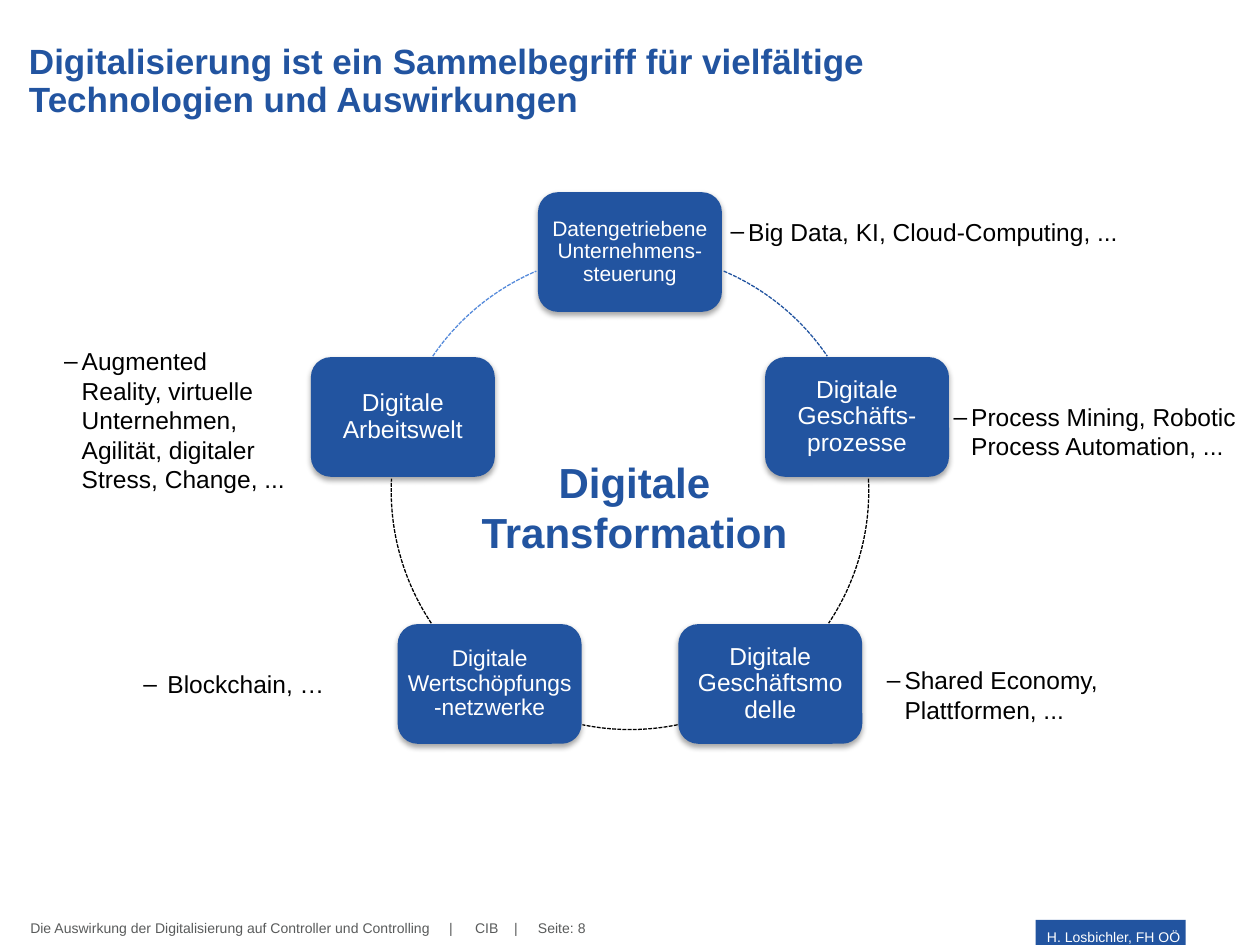
from dataclasses import dataclass
from math import cos, radians, sin

from lxml import etree
from pptx import Presentation, util as u
from pptx.dml.color import RGBColor as Rgb
from pptx.enum import dml, shapes, text
from pptx.oxml import ns


@dataclass(frozen=True)
class Theme:
    font: str = "Arial"
    blue: str = "2254A0"
    light: str = "568BDB"
    grey: str = "595B5B"
    black: str = "000000"
    white: str = "FFFFFF"
    head: int = 20
    core: int = 24
    note: int = 14
    foot: int = 8


@dataclass(frozen=True)
class Box:
    col: float
    row: float
    wide: float
    high: float


@dataclass(frozen=True)
class Node:
    label: str
    size: int
    pad: float


@dataclass(frozen=True)
class Arc:
    start: float
    end: float
    color: str


@dataclass(frozen=True)
class Note:
    label: str
    box: Box
    left: float = 0.64
    hang: float = 0.14


T = Theme()
COLS, ROWS = 100, 75
MID = (50, 38.95)
RADIUS = 18.95
WIDE, HIGH = 14.6, 9.5
AL, AN = text.PP_ALIGN, text.MSO_ANCHOR

NODES = [
    Node("Datengetriebene Unternehmens-steuerung", 12, 0.02),
    Node("Digitale Geschäfts-prozesse", 14, 0.06),
    Node("Digitale Geschäftsmodelle", 14, 0.06),
    Node("Digitale Wertschöpfungs-netzwerke", 13, 0.02),
    Node("Digitale Arbeitswelt", 14, 0.06),
]
ARCS = [
    Arc(293.1, 325.7, T.blue),
    Arc(357.1, 33.7, T.black),
    Arc(78.5, 101.5, T.black),
    Arc(146.3, 182.9, T.black),
    Arc(214.3, 246.9, T.light),
]
NOTES = [
    Note("Big Data, KI, Cloud-Computing, ...", Box(52, 16.7, 58.6, 4)),
    Note("Process Mining, Robotic Process Automation, ...",
         Box(69.7, 31.4, 30.3, 17.5)),
    Note("Augmented Reality, virtuelle Unternehmen, Agilität, digitaler "
         "Stress, Change, ...", Box(-0.9, 27, 24.8, 17.5)),
    Note("Shared Economy,\vPlattformen, ...", Box(64.4, 52.3, 25.8, 8)),
    Note("Blockchain, …", Box(5.4, 52.6, 24.8, 4.3), 0.69, 0.19),
]
FOOT = [
    ("Die Auswirkung der Digitalisierung auf Controller und Controlling     |",
     Box(2.4, 73, 70.8, 1.3)),
    ("CIB    |", Box(37.7, 73, 18.2, 1.3)),
    ("Seite: 8", Box(42.7, 73, 6.3, 2.2)),
]

deck = Presentation()
deck.slide_width, deck.slide_height = u.Inches(10), u.Inches(7.5)
slide = deck.slides.add_slide(deck.slide_layouts[5])


def scale(box: Box) -> tuple:
    x, y = deck.slide_width / COLS, deck.slide_height / ROWS
    return tuple(u.Emu(round(n)) for n in
                 (box.col * x, box.row * y, box.wide * x, box.high * y))


def write(shape, words: str, *, size: float, color: str, bold: bool = False,
          align=AL.LEFT, anchor=AN.TOP, pad: tuple = (0.1, 0.05),
          wrap: bool = True, space: float = 1, dash: tuple = ()) -> None:
    frame = shape.text_frame
    frame.auto_size = text.MSO_AUTO_SIZE.NONE
    frame.word_wrap, frame.vertical_anchor = wrap, anchor
    frame.margin_left = frame.margin_right = u.Inches(pad[0])
    frame.margin_top = frame.margin_bottom = u.Inches(pad[1])
    para = frame.paragraphs[0]
    para.text = words
    para.alignment, para.line_spacing = align, space
    if dash:
        left, hang = dash
        props = para._p.get_or_add_pPr()
        props.set("marL", str(u.Inches(left)))
        props.set("indent", str(-u.Inches(hang)))
        etree.SubElement(props, ns.qn("a:buFont"), typeface=T.font)
        etree.SubElement(props, ns.qn("a:buChar"), char="–")
    for run in para.runs:
        run.font.name, run.font.size = T.font, u.Pt(size)
        run.font.bold = bold
        run.font.color.rgb = Rgb.from_string(color)


def label(words: str, box: Box, **form) -> None:
    write(slide.shapes.add_textbox(*scale(box)), words, **form)


def block(kind, box: Box):
    shape = slide.shapes.add_shape(kind, *scale(box))
    shape.shadow.inherit = False
    shape.fill.solid()
    shape.fill.fore_color.rgb = Rgb.from_string(T.blue)
    shape.line.fill.background()
    return shape


def shade(shape) -> None:
    effect = shape._element.spPr.find(ns.qn("a:effectLst"))
    cast = etree.SubElement(effect, ns.qn("a:outerShdw"),
                            blurRad=str(u.Pt(3.1)), dist=str(u.Pt(1.8)),
                            dir="5400000", rotWithShape="0")
    tint = etree.SubElement(cast, ns.qn("a:srgbClr"), val=T.black)
    etree.SubElement(tint, ns.qn("a:alpha"), val="35000")


def draw_node(node: Node, turn: float) -> None:
    x = MID[0] + RADIUS * sin(radians(turn))
    y = MID[1] - RADIUS * cos(radians(turn))
    shape = block(shapes.MSO_SHAPE.ROUNDED_RECTANGLE,
                  Box(x - WIDE / 2, y - HIGH / 2, WIDE, HIGH))
    shade(shape)
    write(shape, node.label, size=node.size, color=T.white, align=AL.CENTER,
          anchor=AN.MIDDLE, pad=(node.pad, 0.06), space=0.9)


def draw_arc(arc: Arc) -> None:
    ring = Box(MID[0] - RADIUS, MID[1] - RADIUS, 2 * RADIUS, 2 * RADIUS)
    shape = slide.shapes.add_shape(shapes.MSO_SHAPE.ARC, *scale(ring))
    shape.shadow.inherit = False
    shape.fill.background()
    for i, turn in enumerate((arc.start, arc.end)):
        shape.adjustments[i] = turn * 0.6
    shape.line.color.rgb = Rgb.from_string(arc.color)
    shape.line.width = u.Pt(0.75)
    shape.line.dash_style = dml.MSO_LINE.SQUARE_DOT


def main() -> None:
    for words, box in FOOT:
        label(words, box, size=T.foot, color=T.grey, pad=(0, 0))
    write(block(shapes.MSO_SHAPE.RECTANGLE, Box(82.2, 73, 11.9, 2.2)),
          "H. Losbichler, FH OÖ", size=T.foot, color=T.white,
          align=AL.RIGHT, anchor=AN.BOTTOM, pad=(0.04, 0.02))

    title = slide.shapes.title
    title.left, title.top, title.width, title.height = scale(
        Box(1.3, 1.3, 78.9, 8.7))
    write(title, "Digitalisierung ist ein Sammelbegriff für vielfältige "
          "Technologien und Auswirkungen", size=T.head, color=T.blue,
          bold=True, anchor=AN.BOTTOM, space=0.9)

    for i, (node, arc) in enumerate(zip(NODES, ARCS)):
        draw_node(node, i * 360 / len(NODES))
        draw_arc(arc)
    label("Digitale\vTransformation", Box(37.1, 35.7, 26.5, 9.1),
          size=T.core, color=T.blue, bold=True, align=AL.CENTER, wrap=False)
    for note in NOTES:
        label(note.label, note.box, size=T.note, color=T.black,
              dash=(note.left, note.hang))
    deck.save("out.pptx")


if __name__ == "__main__":
    main()
